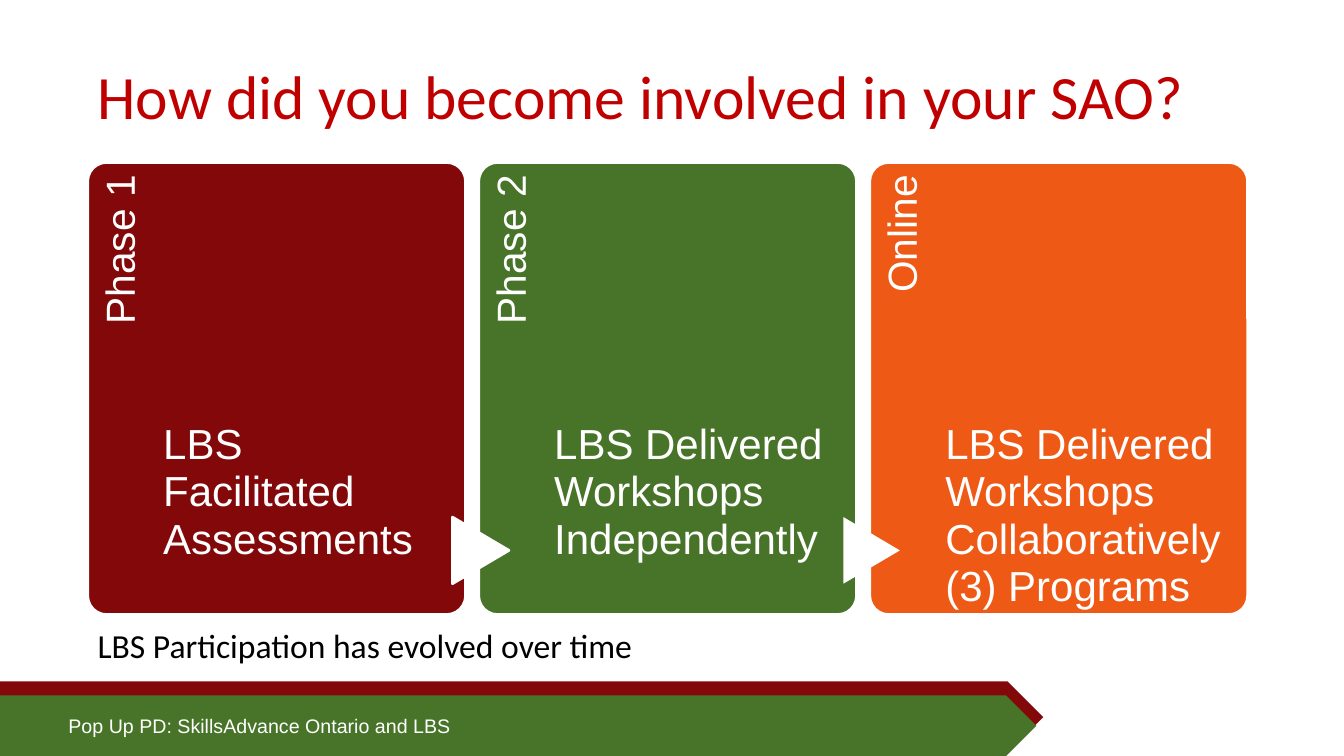
from pptx import Presentation
from pptx.dml.color import RGBColor
from pptx.enum import shapes, text
from pptx.util import Pt

RED, GREEN, ORANGE, WHITE = "82080A", "487429", "EE5915", "FFFFFF"
CARD_LEFT, CARD_TOP, CARD_W, CARD_H = 62.6, 116, 270, 323
PITCH = 279.3
PHASES = [
    ("Phase 1", "LBS Facilitated Assessments", RED),
    ("Phase 2", "LBS Delivered Workshops Independently", GREEN),
    ("Online", "LBS Delivered Workshops Collaboratively (3) Programs", ORANGE),
]


def color(hex_code):
    return RGBColor.from_string(hex_code)


def add_text(s, words, left, top, width, height, size=24, font="Arial",
             fill=WHITE, insets=(7.2, 3.6, 7.2, 3.6), align=text.PP_ALIGN.LEFT,
             anchor=text.MSO_ANCHOR.TOP, spacing=0.9, rotation=0):
    sp = s.shapes.add_textbox(Pt(left), Pt(top), Pt(width), Pt(height))
    sp.rotation = rotation
    tf = sp.text_frame
    tf.word_wrap = True
    tf.vertical_anchor = anchor
    tf.margin_left, tf.margin_top, tf.margin_right, tf.margin_bottom = map(Pt, insets)
    p = tf.paragraphs[0]
    p.alignment = align
    p.line_spacing = spacing
    r = p.add_run()
    r.text = words
    r.font.name = font
    r.font.size = Pt(size)
    r.font.color.rgb = color(fill)
    return sp


def add_block(s, kind, left, top, width, height, fill, line=None, adj=None, rotation=0):
    sp = s.shapes.add_shape(kind, Pt(left), Pt(top), Pt(width), Pt(height))
    sp.shadow.inherit = False
    sp.rotation = rotation
    sp.fill.solid()
    sp.fill.fore_color.rgb = color(fill)
    if line:
        sp.line.color.rgb = color(line)
        sp.line.width = Pt(2)
    else:
        sp.line.fill.background()
    if adj is not None:
        sp.adjustments[0] = adj
    return sp


def add_footer(s):
    kind = shapes.MSO_SHAPE.PENTAGON
    add_block(s, kind, 0, 486.7, 745.2, 51.1, RED, adj=0.5)
    add_block(s, kind, 0, 496.8, 740.2, 43.2, GREEN, adj=0.5)
    add_text(s, "Pop Up PD: SkillsAdvance Ontario and LBS",
             41.8, 506.2, 501.8, 24.5, size=14, spacing=1.0)


def add_card(s, index, label, body, fill):
    left = CARD_LEFT + index * PITCH
    add_block(s, shapes.MSO_SHAPE.ROUNDED_RECTANGLE, left, CARD_TOP, CARD_W, CARD_H,
              fill, line=WHITE, adj=0.05)
    # Vertical label along the left edge
    add_text(s, label, left - 105.1, 221, 265.7, 54, size=29,
             insets=(0, 7.9, 10.1, 0), align=text.PP_ALIGN.RIGHT, rotation=270)
    # Arrow from the previous card
    if index:
        add_block(s, shapes.MSO_SHAPE.FLOWCHART_EXTRACT, left - 22.3, 373, 47.5, 40.3,
                  WHITE, line=WHITE if index == 1 else None, rotation=90)
    add_text(s, body, left + 54, 301, 200.9, 138, size=30,
             insets=(0, 0, 0, 0), spacing=0.94)


def main():
    prs = Presentation()
    prs.slide_width, prs.slide_height = Pt(960), Pt(540)
    s = prs.slides.add_slide(prs.slide_layouts[6])
    add_footer(s)
    # Title and closing line
    add_text(s, "How did you become involved in your SAO?", 62.6, 33.1, 828, 75.6,
             size=44, font="Calibri", fill="C00000", anchor=text.MSO_ANCHOR.MIDDLE)
    add_text(s, "LBS Participation has evolved over time", 62.6, 446.4, 828, 43.9,
             font="Calibri", fill="000000")
    # Phase cards
    for index, (label, body, fill) in enumerate(PHASES):
        add_card(s, index, label, body, fill)
    prs.save("out.pptx")


if __name__ == "__main__":
    main()
